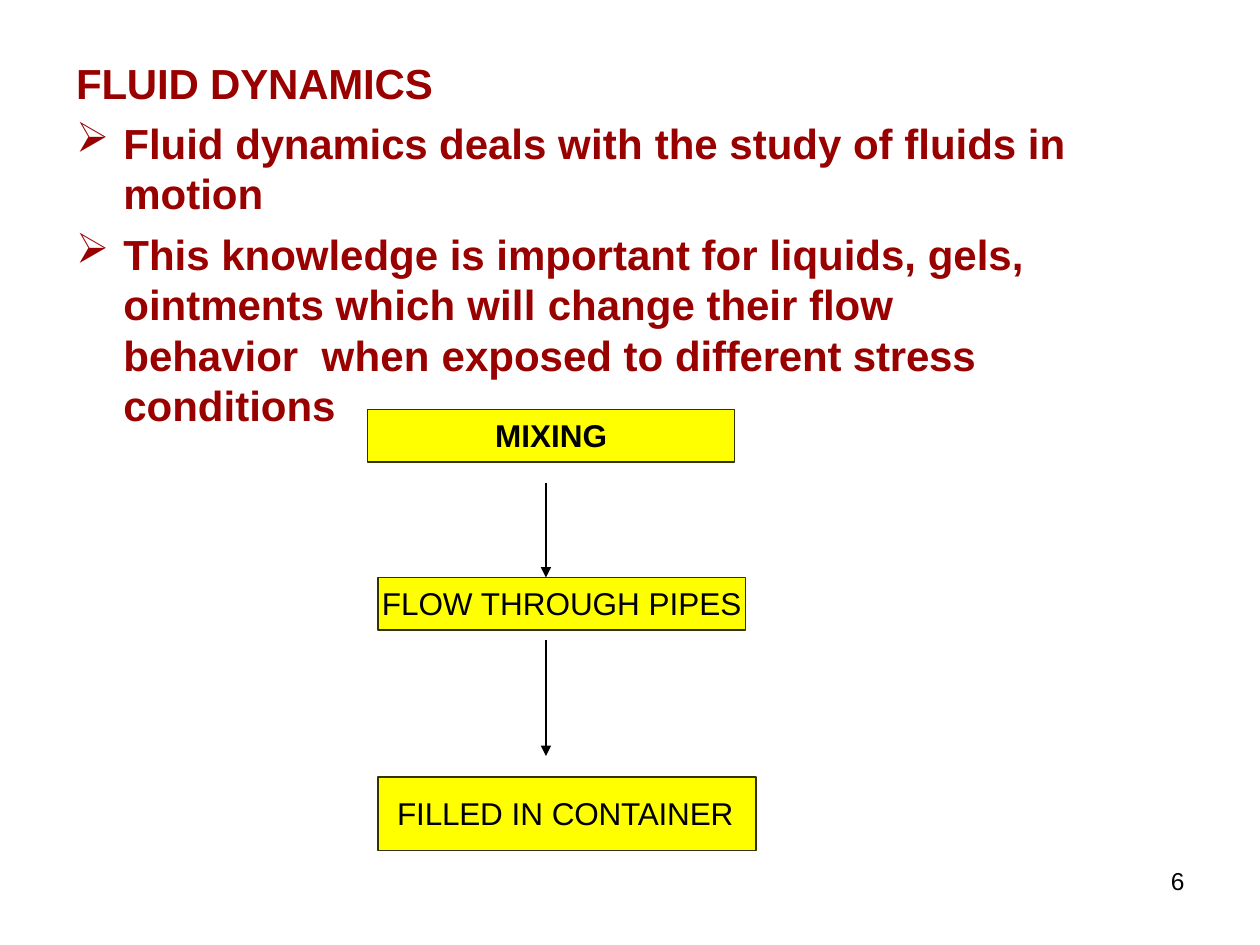
from lxml import etree
from pptx import Presentation
from pptx.dml.color import RGBColor
from pptx.enum import shapes, text
from pptx.oxml import ns
from pptx.util import Pt

RED, BLACK, YELLOW, OLIVE = "990000", "000000", "FFFF00", "333300"
TITLE = [("FLUID DYNAMICS", -10)]
BULLETS = [
    (1, [("Fluid ", 0), ("dynamics ", -10), ("deals ", 0), ("with ", 10),
         ("the study of fluids in  motion", 0)]),
    (5.8, [("This knowledge is important for liquids, gels,  ointments ", 0),
           ("which will ", 10), ("change their flow behavior  ", 0), ("when ", 10),
           ("exposed to ", 0), ("different stress ", -10), ("conditions", 0)]),
]
STEPS = [
    ((210, 234, 210, 30), 3.6, 3.8, 0, True, [("MIXING", 0)]),
    ((216, 330, 210, 30), 3.6, 3.8, 2.2, False, [("FLOW THROUGH PIPES", 0)]),
    ((216, 444, 216, 42), 10, 9.8, 11, False,
     [("FILLED ", -10), ("IN ", 0), ("CONTAINER", -10)]),
]
ARROW_X = 312
ARROWS = [(276, 330), (366, 432)]
PAGE = [("6", 0)]


def rgb(value):
    return RGBColor.from_string(value)


def add_child(parent, tag, **attrs):
    return etree.SubElement(parent, ns.qn(tag), attrs)


def set_frame(shape, top=0):
    tf = shape.text_frame
    tf.word_wrap = True
    tf.vertical_anchor = text.MSO_ANCHOR.TOP
    tf.margin_left = tf.margin_right = tf.margin_bottom = 0
    tf.margin_top = Pt(top)
    return tf


def add_box(s, left, top, width, height, inset=0):
    box = s.shapes.add_textbox(Pt(left), Pt(top), Pt(width), Pt(height))
    return set_frame(box, inset)


def write(p, runs, size, color, bold=False, before=0, left=0, first=0,
          align=text.PP_ALIGN.LEFT):
    p.alignment = align
    p.space_before = Pt(before)
    pPr = p._p.get_or_add_pPr()
    pPr.set("marL", str(Pt(left)))
    pPr.set("indent", str(Pt(first)))
    for words, spacing in runs:
        r = p.add_run()
        r.text = words
        r.font.name = "Arial"
        r.font.size = Pt(size)
        r.font.bold = bold
        r.font.color.rgb = rgb(color)
        r._r.get_or_add_rPr().set("spc", str(spacing))
    return pPr


def add_step(s, place, inset, before, left, bold, runs):
    sp = s.shapes.add_shape(shapes.MSO_SHAPE.RECTANGLE, *map(Pt, place))
    sp.shadow.inherit = False
    sp.fill.solid()
    sp.fill.fore_color.rgb = rgb(YELLOW)
    sp.line.color.rgb = rgb(OLIVE)
    sp.line.width = Pt(0.72)
    align = text.PP_ALIGN.LEFT if left else text.PP_ALIGN.CENTER
    write(set_frame(sp, inset).paragraphs[0], runs, 18, BLACK, bold, before, left,
          align=align)


def add_arrow(s, top, bottom):
    line = s.shapes.add_connector(shapes.MSO_CONNECTOR.STRAIGHT, Pt(ARROW_X), Pt(top),
                                  Pt(ARROW_X), Pt(bottom))
    line.line.color.rgb = rgb(BLACK)
    line.line.width = Pt(1)
    add_child(line.line._get_or_add_ln(), "a:tailEnd", type="triangle")
    add_child(line._element.spPr, "a:effectLst")


def main():
    prs = Presentation()
    prs.slide_width, prs.slide_height = Pt(720), Pt(540)
    s = prs.slides.add_slide(prs.slide_layouts[6])

    tf = add_box(s, 42.5, 31.7, 207.5, 31, 1)
    write(tf.paragraphs[0], TITLE, 24, RED, True, 1, 1)

    tf = add_box(s, 42.5, 66.2, 574, 152, 1)
    for i, (before, runs) in enumerate(BULLETS):
        p = tf.add_paragraph() if i else tf.paragraphs[0]
        pPr = write(p, runs, 24, RED, True, before, 28, -27)
        add_child(pPr, "a:buChar", char="➢")

    for step in STEPS:
        add_step(s, *step)
    for top, bottom in ARROWS:
        add_arrow(s, top, bottom)

    p = add_box(s, 666, 495.4, 13.7, 18).paragraphs[0]
    p.line_spacing = Pt(16.5)
    write(p, PAGE, 14, BLACK, left=3)
    prs.save("out.pptx")


if __name__ == "__main__":
    main()
